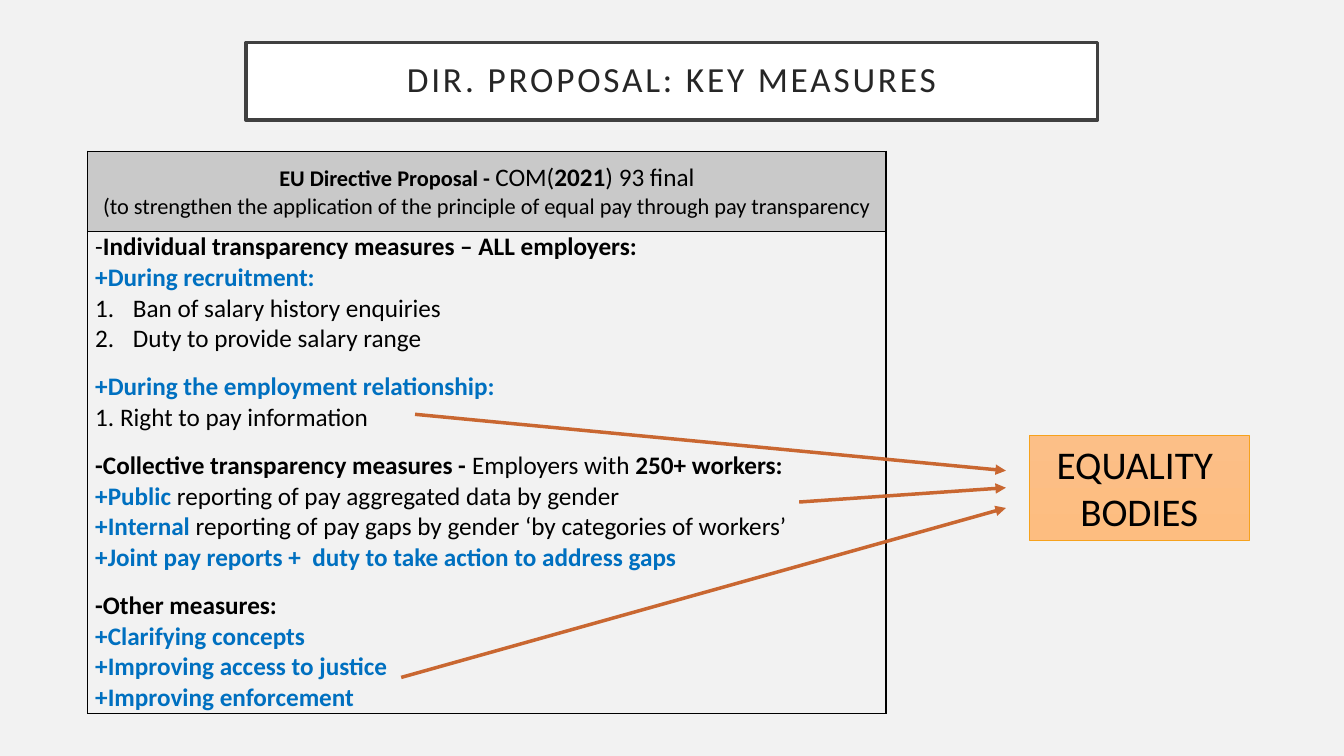
from dataclasses import dataclass
from lxml import etree
from pptx import Presentation, util as u
from pptx.dml.color import RGBColor
from pptx.enum import shapes, text
from pptx.oxml import ns

Cm, Pt = u.Cm, u.Pt


@dataclass(frozen=True)
class Theme:
    font: str = "Calibri"
    page: str = "F2F2F2"
    white: str = "FFFFFF"
    black: str = "000000"
    title: str = "262626"
    frame: str = "404040"
    header: str = "C9C9C9"
    blue: str = "0070C0"
    arrow: str = "C96731"
    glow_top: str = "FCBF87"
    glow_bottom: str = "FDBD80"
    glow_edge: str = "F6A21D"
    title_size: float = 25.2
    body_size: float = 18
    small_size: float = 16
    target_size: float = 28
    gap: float = 12.2


theme = Theme()
BOLD = dict(bold=True)
BLUE = dict(bold=True, color=theme.blue)
SMALL = dict(size=theme.small_size)

HEADER = [
    [("EU Directive Proposal - ", dict(bold=True, **SMALL)), ("COM(", {}),
     ("2021", BOLD), (") 93 final", {})],
    [("(to strengthen the application of the principle of equal pay through pay transparency", SMALL)],
]

# Each group of measures is set apart by a gap
GROUPS = [
    [
        [("-", {}), ("Individual transparency measures – ALL employers:", BOLD)],
        [("+During recruitment:", BLUE)],
        "Ban of salary history enquiries",
        "Duty to provide salary range",
    ],
    [
        [("+During the employment relationship:", BLUE)],
        [("1. Right to pay information", {})],
    ],
    [
        [("-Collective transparency measures - ", BOLD), ("Employers with ", {}),
         ("250+ workers:", BOLD)],
        [("+Public ", BLUE), ("reporting of pay aggregated data by gender ", {})],
        [("+Internal ", BLUE), ("reporting of pay gaps by gender ‘by categories of workers’", {})],
        [("+Joint pay reports +  duty to take action to address gaps", BLUE)],
    ],
    [
        [("-Other measures:", BOLD)],
        [("+Clarifying concepts", BLUE)],
        [("+Improving access to justice", BLUE)],
        [("+Improving enforcement ", BLUE)],
    ],
]


def rgb(value):
    return RGBColor.from_string(value)


def add_text(para, words, size=theme.body_size, color=theme.black, bold=False, spacing=None):
    span = para.add_run()
    span.text = words
    span.font.name = theme.font
    span.font.size = Pt(size)
    span.font.bold = bold
    span.font.color.rgb = rgb(color)
    if spacing:
        span.font._element.set("spc", str(spacing * 100))


def next_para(frame):
    """Use the empty first paragraph, then add further ones."""
    first = frame.paragraphs[0]
    return frame.add_paragraph() if first.runs else first


def add_box(page, area, edge, edge_width):
    box = page.shapes.add_shape(shapes.MSO_SHAPE.RECTANGLE, *map(Cm, area))
    box.shadow.inherit = False
    box.line.color.rgb = rgb(edge)
    box.line.width = Pt(edge_width)
    box.text_frame.word_wrap = True
    box.text_frame.vertical_anchor = text.MSO_ANCHOR.MIDDLE
    return box


def number_para(para):
    props = para._p.get_or_add_pPr()
    props.set("marL", str(Cm(0.95)))
    props.set("indent", str(-Cm(0.95)))
    etree.SubElement(props, ns.qn("a:buFont"), typeface="+mj-lt")
    etree.SubElement(props, ns.qn("a:buAutoNum"), type="arabicPeriod")


def format_cell(cell):
    cell.margin_left = cell.margin_right = Cm(0.19)
    cell.margin_top = cell.margin_bottom = 0
    props = cell._tc.get_or_add_tcPr()
    for side in "LRTB":
        edge = etree.SubElement(props, ns.qn(f"a:ln{side}"), w=str(Pt(1)))
        fill = etree.SubElement(edge, ns.qn("a:solidFill"))
        etree.SubElement(fill, ns.qn("a:srgbClr"), val=theme.black)


def draw_title(page, area):
    box = add_box(page, area, theme.frame, 2.5)
    box.fill.solid()
    box.fill.fore_color.rgb = rgb(theme.white)
    para = box.text_frame.paragraphs[0]
    para.alignment = text.PP_ALIGN.CENTER
    para.line_spacing = 0.9
    add_text(para, "DIR. PROPOSAL: KEY MEASURES", size=theme.title_size,
             color=theme.title, spacing=2)


def draw_measures(page, area, header_height):
    table = page.shapes.add_table(2, 1, *map(Cm, area)).table
    table.first_row = table.horz_banding = False
    table.rows[0].height = Cm(header_height)
    table.rows[1].height = Cm(area[3] - header_height)
    header, body = table.cell(0, 0), table.cell(1, 0)
    for cell in (header, body):
        format_cell(cell)

    # Heading row
    header.fill.solid()
    header.fill.fore_color.rgb = rgb(theme.header)
    header.vertical_anchor = text.MSO_ANCHOR.MIDDLE
    for spans in HEADER:
        para = next_para(header.text_frame)
        para.alignment = text.PP_ALIGN.CENTER
        for words, style in spans:
            add_text(para, words, **style)

    # Measures; a plain string is a numbered item
    body.fill.background()
    for group_index, group in enumerate(GROUPS):
        for line_index, spans in enumerate(group):
            para = next_para(body.text_frame)
            para.alignment = text.PP_ALIGN.JUSTIFY
            if group_index and not line_index:
                para.space_before = Pt(theme.gap)
            if isinstance(spans, str):
                number_para(para)
                spans = [(spans, {})]
            for words, style in spans:
                add_text(para, words, **style)


def draw_target(page, area):
    box = add_box(page, area, theme.glow_edge, 0.5)
    box.fill.gradient()
    box.fill.gradient_angle = 270
    for stop, color in zip(box.fill.gradient_stops, (theme.glow_top, theme.glow_bottom)):
        stop.color.rgb = rgb(color)
    for words in ("EQUALITY ", "BODIES"):
        para = next_para(box.text_frame)
        para.alignment = text.PP_ALIGN.CENTER
        add_text(para, words, size=theme.target_size)


def draw_arrows(page, target_area, routes):
    """Each route is a start point and its end height below the target's top."""
    left, top = target_area[:2]
    for start_x, start_y, drop in routes:
        arrow = page.shapes.add_connector(
            shapes.MSO_CONNECTOR.STRAIGHT,
            *map(Cm, (start_x, start_y, left - 0.58, top + drop)))
        arrow.line.color.rgb = rgb(theme.arrow)
        arrow.line.width = Pt(2.5)
        etree.SubElement(arrow.line._get_or_add_ln(), ns.qn("a:tailEnd"), type="triangle")
        etree.SubElement(arrow._element.spPr, ns.qn("a:effectLst"))


def main():
    deck = Presentation()
    deck.slide_width, deck.slide_height = Cm(33.87), Cm(19.05)
    page = deck.slides.add_slide(deck.slide_layouts[6])
    page.background.fill.solid()
    page.background.fill.fore_color.rgb = rgb(theme.page)

    target_area = (25.93, 10.97, 5.56, 2.64)
    draw_title(page, (6.2, 1.07, 21.46, 1.96))
    draw_measures(page, (2.21, 3.81, 20.12, 14.17), header_height=2.03)
    draw_arrows(page, target_area, [(10.46, 10.44, 0.89), (20.14, 12.65, 1.32), (10.11, 17.07, 1.83)])
    draw_target(page, target_area)
    deck.save("out.pptx")


if __name__ == "__main__":
    main()
